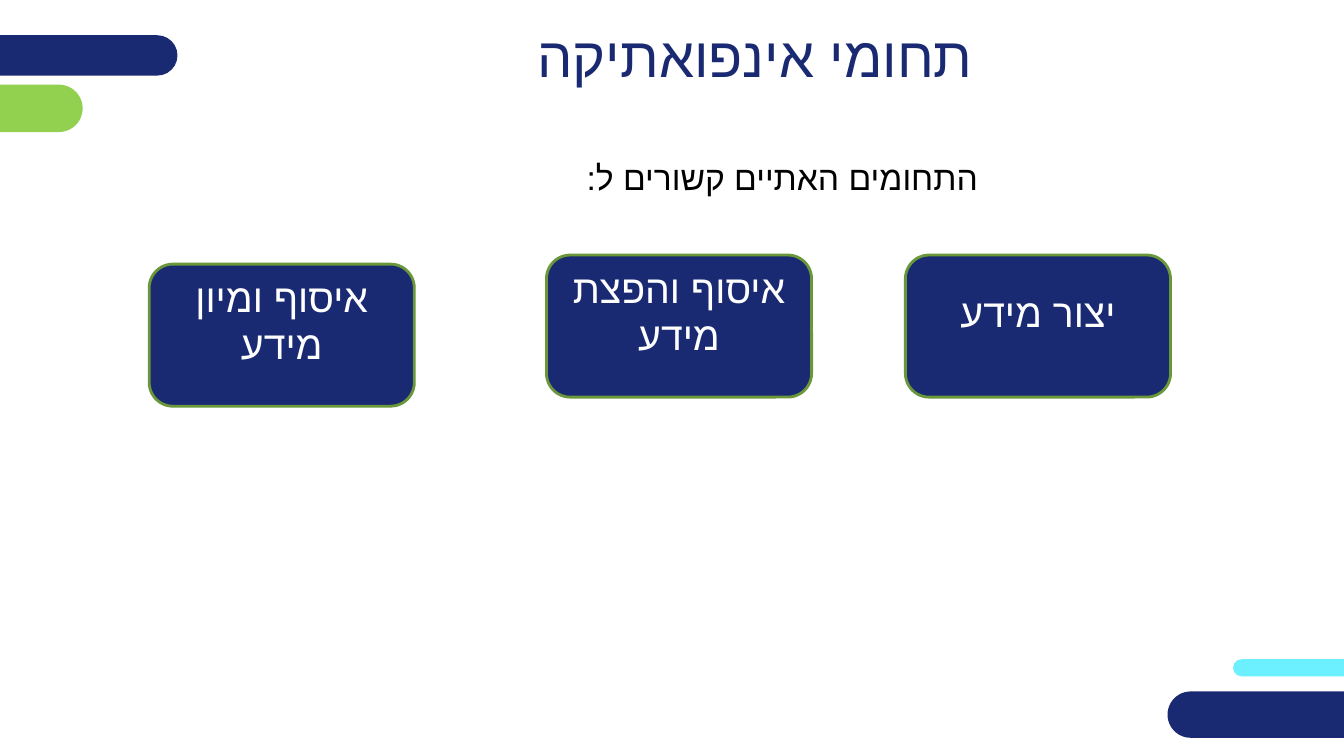
from dataclasses import dataclass

from lxml import etree
from pptx import Presentation
from pptx.dml.color import RGBColor
from pptx.enum.lang import MSO_LANGUAGE_ID
from pptx.enum.shapes import MSO_SHAPE
from pptx.enum.text import MSO_ANCHOR, PP_ALIGN
from pptx.oxml.ns import qn
from pptx.shapes.autoshape import Shape
from pptx.slide import Slide
from pptx.text.text import TextFrame
from pptx.util import Inches, Pt

ROUNDED = MSO_SHAPE.ROUNDED_RECTANGLE
HEBREW = MSO_LANGUAGE_ID.HEBREW
CENTER, RIGHT = PP_ALIGN.CENTER, PP_ALIGN.RIGHT
MIDDLE, TOP = MSO_ANCHOR.MIDDLE, MSO_ANCHOR.TOP


@dataclass(frozen=True)
class Theme:
    font: str = "Arial"
    navy: str = "192A72"
    green: str = "92D050"
    cyan: str = "6CF0FF"
    border: str = "6A973A"
    white: str = "FFFFFF"
    black: str = "000000"
    title_size: int = 40
    intro_size: int = 24
    field_size: int = 28
    border_width: int = 2


@dataclass(frozen=True)
class Box:
    left: float
    top: float
    width: float
    height: float


@dataclass(frozen=True)
class Bar:
    box: Box
    color: str


@dataclass(frozen=True)
class Field:
    text: str
    left: float
    top: float


@dataclass(frozen=True)
class Caption:
    text: str
    box: Box
    size: int
    color: str
    align: PP_ALIGN
    anchor: MSO_ANCHOR


THEME = Theme()
FIELD_WIDTH, FIELD_HEIGHT = 2.63, 1.41
FIELD_BOTTOM_INSET = 0.34

BARS = (
    Bar(Box(12.23, 6.54, 1.74, 0.17), THEME.cyan),
    Bar(Box(-0.45, 0.84, 1.27, 0.47), THEME.green),
    Bar(Box(-0.53, 0.35, 2.29, 0.4), THEME.navy),
    Bar(Box(11.58, 6.86, 2.4, 0.46), THEME.navy),
)
CAPTIONS = (
    Caption("תחומי אינפואתיקה", Box(1.9, 0.2, 11.18, 0.7),
            THEME.title_size, THEME.navy, CENTER, MIDDLE),
    Caption("התחומים האתיים קשורים ל:", Box(3.13, 1.51, 6.67, 0.5),
            THEME.intro_size, THEME.black, RIGHT, TOP),
)
FIELDS = (
    Field("יצור מידע", 8.98, 2.53),
    Field("איסוף והפצת מידע", 5.42, 2.53),
    Field("איסוף ומיון מידע", 1.48, 2.62),
)


def place(box: Box) -> tuple[Inches, Inches, Inches, Inches]:
    return Inches(box.left), Inches(box.top), Inches(box.width), Inches(box.height)


def write_hebrew(frame: TextFrame, text: str, size: int, color: str,
                 align: PP_ALIGN, anchor: MSO_ANCHOR) -> None:
    frame.word_wrap = True
    frame.vertical_anchor = anchor
    paragraph = frame.paragraphs[0]
    paragraph.alignment = align
    paragraph._p.get_or_add_pPr().set("rtl", "1")
    run = paragraph.add_run()
    run.text = text
    run.font.color.rgb = RGBColor.from_string(color)
    font_format = {"name": THEME.font, "size": Pt(size), "language_id": HEBREW}
    for attribute, value in font_format.items():
        setattr(run.font, attribute, value)
    etree.SubElement(run._r.get_or_add_rPr(), qn("a:cs"), typeface=THEME.font)


def add_rounded(slide: Slide, box: Box, color: str, roundness: float) -> Shape:
    shape = slide.shapes.add_shape(ROUNDED, *place(box))
    shape.adjustments[0] = roundness
    shape.shadow.inherit = False
    shape.fill.solid()
    shape.fill.fore_color.rgb = RGBColor.from_string(color)
    shape.line.fill.background()
    return shape


def add_caption(slide: Slide, caption: Caption) -> None:
    frame = slide.shapes.add_textbox(*place(caption.box)).text_frame
    write_hebrew(frame, caption.text, caption.size, caption.color,
                 caption.align, caption.anchor)


def add_field(slide: Slide, field: Field) -> None:
    box = Box(field.left, field.top, FIELD_WIDTH, FIELD_HEIGHT)
    shape = add_rounded(slide, box, THEME.navy, 0.167)
    shape.line.color.rgb = RGBColor.from_string(THEME.border)
    shape.line.width = Pt(THEME.border_width)
    shape.text_frame.margin_bottom = Inches(FIELD_BOTTOM_INSET)
    write_hebrew(shape.text_frame, field.text, THEME.field_size, THEME.white,
                 CENTER, MIDDLE)


def main() -> None:
    presentation = Presentation()
    presentation.slide_width = Inches(13.33)
    presentation.slide_height = Inches(7.5)
    slide = presentation.slides.add_slide(presentation.slide_layouts[6])
    for bar in BARS:
        add_rounded(slide, bar.box, bar.color, 0.5)
    for caption in CAPTIONS:
        add_caption(slide, caption)
    for field in FIELDS:
        add_field(slide, field)
    presentation.save("out.pptx")


if __name__ == "__main__":
    main()
